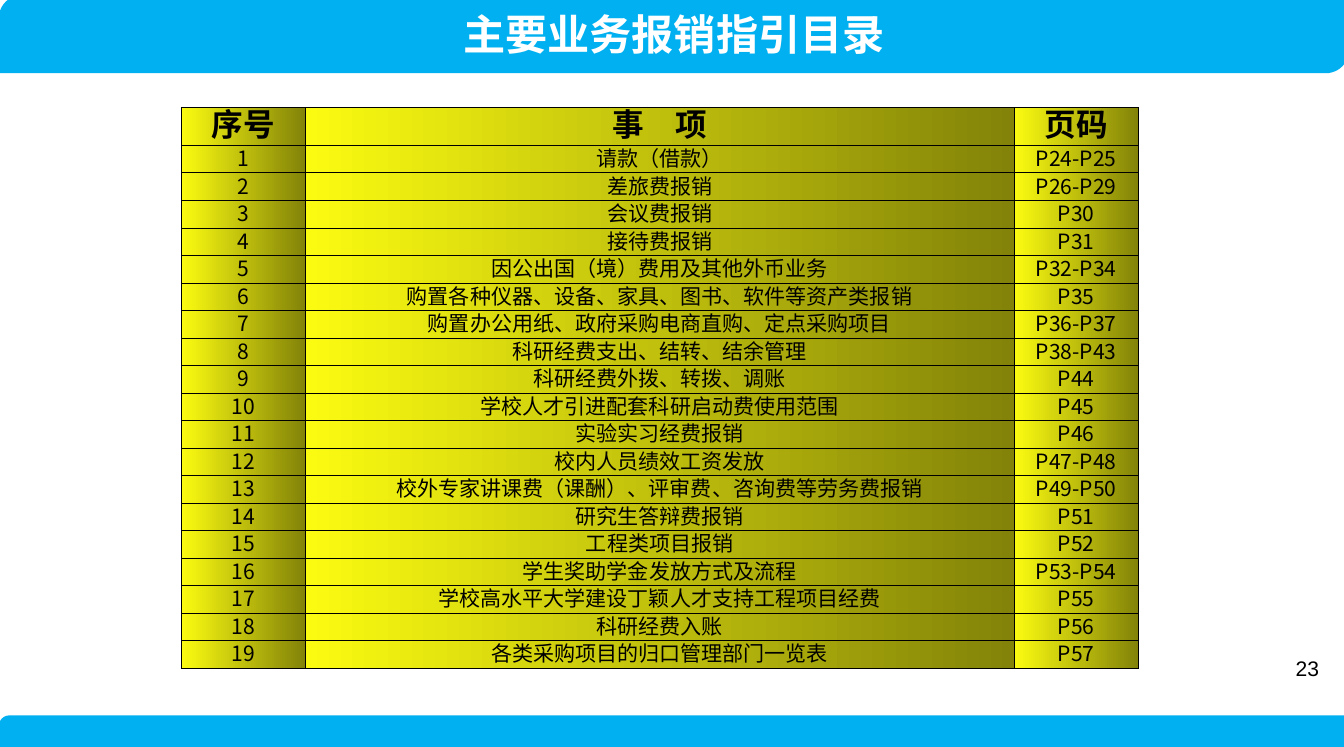
from pptx import Presentation
from pptx.dml.color import RGBColor
from pptx.enum.shapes import MSO_SHAPE
from pptx.enum.text import MSO_ANCHOR, PP_ALIGN
from pptx.oxml import parse_xml
from pptx.oxml.ns import nsdecls
from pptx.util import Pt

BAND = MSO_SHAPE.ROUND_2_DIAG_RECTANGLE
MIDDLE = MSO_ANCHOR.MIDDLE
CENTER = PP_ALIGN.CENTER
LEFT = PP_ALIGN.LEFT

HEAD = ("序号", "事　项", "页码")
ITEMS = [
    ("请款（借款）", "P24-P25"),
    ("差旅费报销", "P26-P29"),
    ("会议费报销", "P30"),
    ("接待费报销", "P31"),
    ("因公出国（境）费用及其他外币业务", "P32-P34"),
    ("购置各种仪器、设备、家具、图书、软件等资产类报销", "P35"),
    ("购置办公用纸、政府采购电商直购、定点采购项目", "P36-P37"),
    ("科研经费支出、结转、结余管理", "P38-P43"),
    ("科研经费外拨、转拨、调账", "P44"),
    ("学校人才引进配套科研启动费使用范围", "P45"),
    ("实验实习经费报销", "P46"),
    ("校内人员绩效工资发放", "P47-P48"),
    ("校外专家讲课费（课酬）、评审费、咨询费等劳务费报销", "P49-P50"),
    ("研究生答辩费报销", "P51"),
    ("工程类项目报销", "P52"),
    ("学生奖助学金发放方式及流程", "P53-P54"),
    ("学校高水平大学建设丁颖人才支持工程项目经费", "P55"),
    ("科研经费入账", "P56"),
    ("各类采购项目的归口管理部门一览表", "P57"),
]


def color(value):
    return RGBColor.from_string(value)


class Deck:
    font = "Noto Sans CJK SC"
    blue, black, white = "00B0F0", "000000", "FFFFFF"
    gradient = ("FBFB11", "838309")

    def __init__(self, width, height):
        self.prs = Presentation()
        self.prs.slide_width, self.prs.slide_height = Pt(width), Pt(height)
        self.s = self.prs.slides.add_slide(self.prs.slide_layouts[6])

    def run(self, tf, text, size, fill, bold=False, align=CENTER, font=None):
        """Add one styled run to the first paragraph and return that paragraph."""
        p = tf.paragraphs[0]
        p.alignment = align
        r = p.add_run()
        r.text = text
        r.font.size, r.font.bold = Pt(size), bold
        r.font.color.rgb = color(fill)
        r.font.name = font or self.font
        r.font._element.append(parse_xml(
            f'<a:ea {nsdecls("a")} typeface="{r.font.name}"/>'))
        return p

    def band(self, top, height, title=None):
        sp = self.s.shapes.add_shape(BAND, Pt(-0.7), Pt(top), Pt(769), Pt(height))
        sp.shadow.inherit = False
        sp.adjustments[0], sp.adjustments[1] = 0.3, 0
        sp.fill.solid()
        sp.fill.fore_color.rgb = color(self.blue)
        sp.line.fill.background()
        if title:
            sp.text_frame.vertical_anchor = MIDDLE
            self.run(sp.text_frame, title, 24, self.white, bold=True)

    def text(self, left, top, width, height, text, size, font):
        tf = self.s.shapes.add_textbox(
            Pt(left), Pt(top), Pt(width), Pt(height)).text_frame
        tf.word_wrap = True
        self.run(tf, text, size, self.black, align=LEFT, font=font)

    def cell(self, cell, text, size, bold, spacing):
        cell.margin_left = cell.margin_right = cell.margin_top = cell.margin_bottom = 0
        cell.vertical_anchor = MIDDLE
        p = self.run(cell.text_frame, text, size, self.black, bold)
        p.line_spacing = Pt(spacing)
        cell.fill.gradient()
        cell.fill.gradient_angle = 0
        for stop, value in zip(cell.fill.gradient_stops, self.gradient):
            stop.color.rgb = color(value)
        tcPr = cell._tc.get_or_add_tcPr()
        for i, side in enumerate("LRTB"):
            tcPr.insert(i, parse_xml(
                f'<a:ln{side} {nsdecls("a")} w="{Pt(0.5)}"><a:solidFill>'
                f'<a:srgbClr val="{self.black}"/></a:solidFill></a:ln{side}>'))

    def table(self, left, top, widths, rows, head_height, row_height):
        heights = [head_height] + [row_height] * (len(rows) - 1)
        table = self.s.shapes.add_table(
            len(rows), len(widths), Pt(left), Pt(top),
            Pt(sum(widths)), Pt(sum(heights))).table
        table.horz_banding = False
        for column, width in zip(table.columns, widths):
            column.width = Pt(width)
        for i, (row, height, texts) in enumerate(zip(table.rows, heights, rows)):
            row.height = Pt(height)
            for cell, text in zip(row.cells, texts):
                self.cell(cell, text, 12 if i else 18, i == 0, height - 0.2)


def main():
    deck = Deck(765.36, 425.52)
    deck.band(-2.9, 44.6, "主要业务报销指引目录")
    deck.band(407.5, 20.2)
    rows = [HEAD] + [(str(n), *item) for n, item in enumerate(ITEMS, 1)]
    deck.table(103.2, 61.2, (70.6, 403.8, 70.6), rows, 21.6, 15.7)
    deck.text(730.8, 370, 31, 21.6, "23", 12, "Arial")
    deck.prs.save("out.pptx")


if __name__ == "__main__":
    main()
